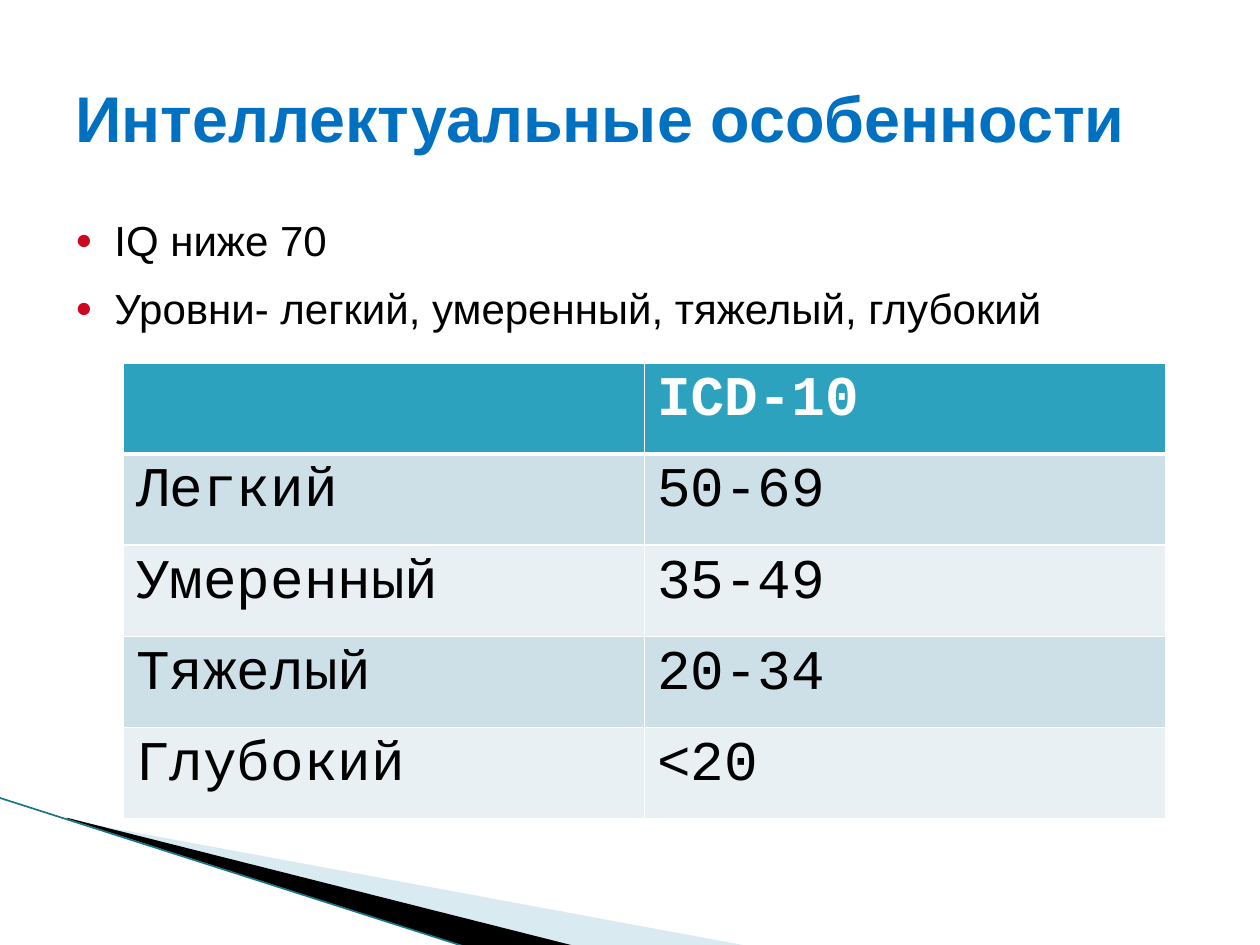
from lxml import etree
from pptx import Presentation
from pptx.dml.color import RGBColor
from pptx.enum.shapes import MSO_CONNECTOR
from pptx.enum.text import MSO_ANCHOR
from pptx.oxml.ns import qn
from pptx.util import Inches, Pt

STRAIGHT = MSO_CONNECTOR.STRAIGHT
MIDDLE = MSO_ANCHOR.MIDDLE

BLACK, WHITE = "000000", "FFFFFF"
HEADER_FILL = "2DA2BF"
BAND_FILLS = ["CDE0E8", "E8F0F4"]


def color(hex_string):
    return RGBColor.from_string(hex_string)


def add_run(paragraph, text, font_name, size, hex_color, bold=False):
    run = paragraph.add_run()
    run.text = text
    run.font.name = font_name
    run.font.size = Pt(size)
    run.font.bold = bold
    run.font.color.rgb = color(hex_color)


presentation = Presentation()
presentation.slide_width = Inches(10)
presentation.slide_height = Inches(7.5)
slide = presentation.slides.add_slide(presentation.slide_layouts[6])

# Corner wedges: points, fill, opacity in percent
wedges = [
    ([(0.55, 6.51), (5.95, 7.51), (4.56, 7.51), (0.55, 6.5)], "A0CBDC", 40),
    ([(0.53, 6.49), (4.57, 7.51), (3.72, 7.52), (0.54, 6.5)], BLACK, 100),
]
for points, fill, opacity in wedges:
    corners = [(Inches(x), Inches(y)) for x, y in points]
    builder = slide.shapes.build_freeform(*corners[0], scale=1.0)
    builder.add_line_segments(corners[1:], close=True)
    wedge = builder.convert_to_shape()
    wedge.shadow.inherit = False
    wedge.fill.solid()
    wedge.fill.fore_color.rgb = color(fill)
    wedge.line.fill.background()
    if opacity < 100:
        fill_color = wedge.fill._xPr.find(qn("a:solidFill"))[0]
        etree.SubElement(fill_color, qn("a:alpha"), val=str(opacity * 1000))

edge = slide.shapes.add_connector(
    STRAIGHT, Inches(-0.01), Inches(6.33), Inches(3.71), Inches(7.52))
edge.line.color.rgb = color("1B7587")
edge.line.width = Pt(0.95)
etree.SubElement(edge._element.spPr, qn("a:effectLst"))

# Bulleted text
body = slide.shapes.add_textbox(Inches(0.5), Inches(1.65), Inches(9), Inches(1.15))
body.text_frame.word_wrap = True
lines = ["IQ ниже 70", "Уровни- легкий, умеренный, тяжелый, глубокий"]
for index, line in enumerate(lines):
    if index == 0:
        paragraph = body.text_frame.paragraphs[0]
    else:
        paragraph = body.text_frame.add_paragraph()
        paragraph.space_before = Pt(10)
    properties = paragraph._p.get_or_add_pPr()
    properties.set("marL", str(Inches(0.31)))
    properties.set("indent", str(Inches(-0.31)))
    bullet_color = etree.SubElement(properties, qn("a:buClr"))
    etree.SubElement(bullet_color, qn("a:srgbClr"), val="CD0921")
    etree.SubElement(properties, qn("a:buSzPct"), val="68000")
    etree.SubElement(properties, qn("a:buFont"), typeface="Arial")
    etree.SubElement(properties, qn("a:buChar"), char="●")
    add_run(paragraph, line, "Arial", 24, BLACK)

# Title
title = slide.shapes.add_textbox(Inches(0.5), Inches(0.3), Inches(9), Inches(1.25))
title.text_frame.word_wrap = True
title.text_frame.vertical_anchor = MIDDLE
add_run(title.text_frame.paragraphs[0], "Интеллектуальные особенности",
        "Arial", 36.9, "0070C0", bold=True)

# Table of levels
rows = [
    ("", "ICD-10"),
    ("Легкий", "50-69"),
    ("Умеренный", "35-49"),
    ("Тяжелый", "20-34"),
    ("Глубокий", "<20"),
]
table = slide.shapes.add_table(
    len(rows), 2, Inches(0.98), Inches(2.88), Inches(8.27), Inches(3.62)).table
for row_index, row in enumerate(rows):
    is_header = row_index == 0
    border_widths = {
        "a:lnL": 1,
        "a:lnR": 1,
        "a:lnT": 3 if row_index == 1 else 1,
        "a:lnB": 3 if is_header else 1,
    }
    for column_index, text in enumerate(row):
        cell = table.cell(row_index, column_index)
        cell_properties = cell._tc.get_or_add_tcPr()
        for tag, width in border_widths.items():
            border = etree.SubElement(cell_properties, qn(tag), w=str(Pt(width)))
            border_fill = etree.SubElement(border, qn("a:solidFill"))
            etree.SubElement(border_fill, qn("a:srgbClr"), val=WHITE)
        cell.fill.solid()
        cell.fill.fore_color.rgb = color(
            HEADER_FILL if is_header else BAND_FILLS[(row_index - 1) % 2])
        if text:
            add_run(cell.text_frame.paragraphs[0], text, "Courier New", 32,
                    WHITE if is_header else BLACK, bold=is_header)

presentation.save("out.pptx")
